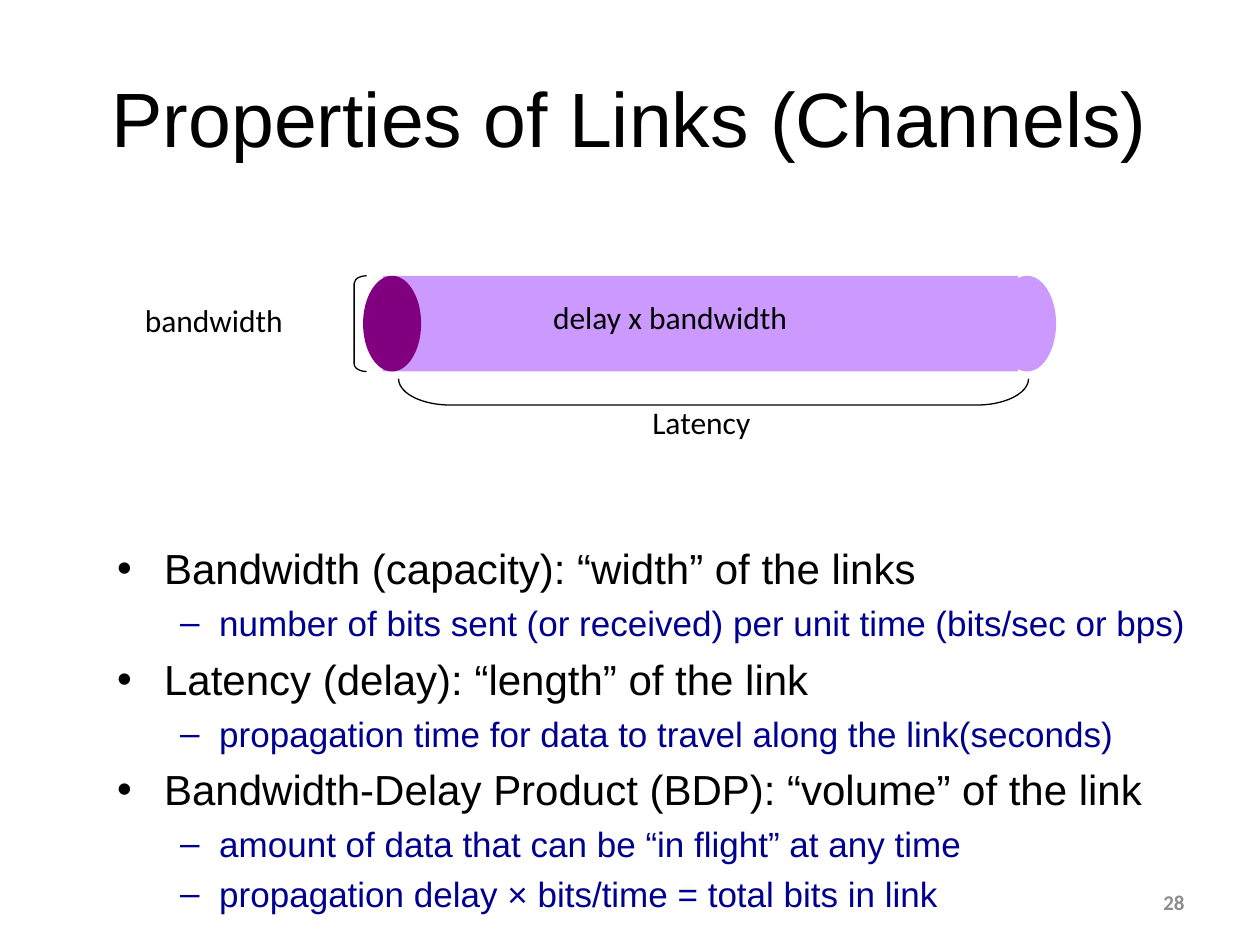
from lxml import etree
from pptx import Presentation
from pptx import util as u
from pptx.dml.color import RGBColor
from pptx.enum import shapes, text
from pptx.oxml import ns

BLACK = RGBColor(0x00, 0x00, 0x00)
NAVY = RGBColor(0x00, 0x00, 0x90)
GREY = RGBColor(0x8C, 0x8C, 0x8C)
LILAC = RGBColor(0xCC, 0x99, 0xFF)
PURPLE = RGBColor(0x80, 0x00, 0x80)

SHAPE = shapes.MSO_SHAPE
ALIGN = text.PP_ALIGN
MIDDLE = text.MSO_ANCHOR.MIDDLE

PIPE_TOP, PIPE_HEIGHT, CAP_WIDTH = 5.56, 1.93, 1.17

# Per level: bullet, left margin and hanging indent in cm, space before, font
LEVELS = [
    ("•", 0.95, -0.95, 5.5, {"size": u.Pt(24), "name": "Arial"}, BLACK),
    ("–", 2.06, -0.79, 4.8, {"size": u.Pt(20), "name": "Arial"}, NAVY),
]
POINTS = [
    (0, "Bandwidth (capacity): “width” of the links"),
    (1, "number of bits sent (or received) per unit time (bits/sec or bps)"),
    (0, "Latency (delay): “length” of the link"),
    (1, "propagation time for data to travel along the link(seconds)"),
    (0, "Bandwidth-Delay Product (BDP): “volume” of the link"),
    (1, "amount of data that can be “in flight” at any time"),
    (1, "propagation delay × bits/time = total bits in link"),
]


def cm(box):
    return [u.Cm(v) for v in box]


def add_run(p, words, color, font):
    r = p.add_run()
    r.text = words
    r.font.color.rgb = color
    for key, value in font.items():
        setattr(r.font, key, value)


def add_frame(slide, box, anchor=text.MSO_ANCHOR.TOP):
    tf = slide.shapes.add_textbox(*cm(box)).text_frame
    tf.word_wrap = True
    tf.vertical_anchor = anchor
    return tf


def add_label(slide, box, words, color=BLACK, align=ALIGN.LEFT,
              anchor=text.MSO_ANCHOR.TOP, **font):
    p = add_frame(slide, box, anchor).paragraphs[0]
    p.alignment = align
    add_run(p, words, color, {"name": "Calibri", "size": u.Pt(18), **font})


def add_solid(slide, kind, box, color):
    sp = slide.shapes.add_shape(kind, *cm(box))
    sp.shadow.inherit = False
    sp.fill.solid()
    sp.fill.fore_color.rgb = color
    sp.line.fill.background()


def add_bracket(slide, box, curve, rotation=0):
    sp = slide.shapes.add_shape(SHAPE.LEFT_BRACKET, *cm(box))
    sp.shadow.inherit = False
    sp.fill.background()
    sp.line.color.rgb = BLACK
    sp.line.width = u.Pt(0.75)
    sp.adjustments[0] = curve
    sp.rotation = rotation


def add_bullets(slide, box, points):
    tf = add_frame(slide, box)
    for i, (level, words) in enumerate(points):
        char, margin, indent, space, font, color = LEVELS[level]
        p = tf.add_paragraph() if i else tf.paragraphs[0]
        p.level = level
        p.space_before = u.Pt(space)
        pPr = p._p.get_or_add_pPr()
        pPr.set("marL", str(u.Cm(margin)))
        pPr.set("indent", str(u.Cm(indent)))
        etree.SubElement(pPr, ns.qn("a:buFont")).set("typeface", "Arial")
        etree.SubElement(pPr, ns.qn("a:buChar")).set("char", char)
        add_run(p, words, color, font)


def add_pipe(slide):
    """Draw the link as a cylinder with its width and length marked."""
    for kind, left, width, color in [
        (SHAPE.OVAL, 20.12, CAP_WIDTH, LILAC),
        (SHAPE.RECTANGLE, 7.72, 12.8, LILAC),
        (SHAPE.OVAL, 7.32, CAP_WIDTH, PURPLE),
    ]:
        add_solid(slide, kind, (left, PIPE_TOP, width, PIPE_HEIGHT), color)
    add_bracket(slide, (7.14, PIPE_TOP, 0.25, PIPE_HEIGHT), 0.61)
    add_bracket(slide, (14.12, 1.55, 0.53, 12.7), 1.98, rotation=270)
    add_label(slide, (2.67, 5.94, 4.32, 1.09), "bandwidth")
    add_label(slide, (12.9, 8, 3.51, 1.12), "Latency")
    add_label(slide, (10.9, 5.89, 7.7, 1.09), "delay x bandwidth")


def main():
    prs = Presentation()
    prs.slide_width, prs.slide_height = u.Cm(25.4), u.Cm(19.05)
    slide = prs.slides.add_slide(prs.slide_layouts[6])
    add_label(slide, (1.27, 0.76, 22.86, 3.18), "Properties of Links (Channels)",
              align=ALIGN.CENTER, anchor=MIDDLE, name="Arial", size=u.Pt(44))
    add_bullets(slide, (2.11, 10.82, 23.7, 8.23), POINTS)
    add_pipe(slide)
    add_label(slide, (18.21, 17.68, 5.92, 1.02), "28", GREY, ALIGN.RIGHT,
              MIDDLE, size=u.Pt(12), bold=True)
    prs.save("out.pptx")


if __name__ == "__main__":
    main()
